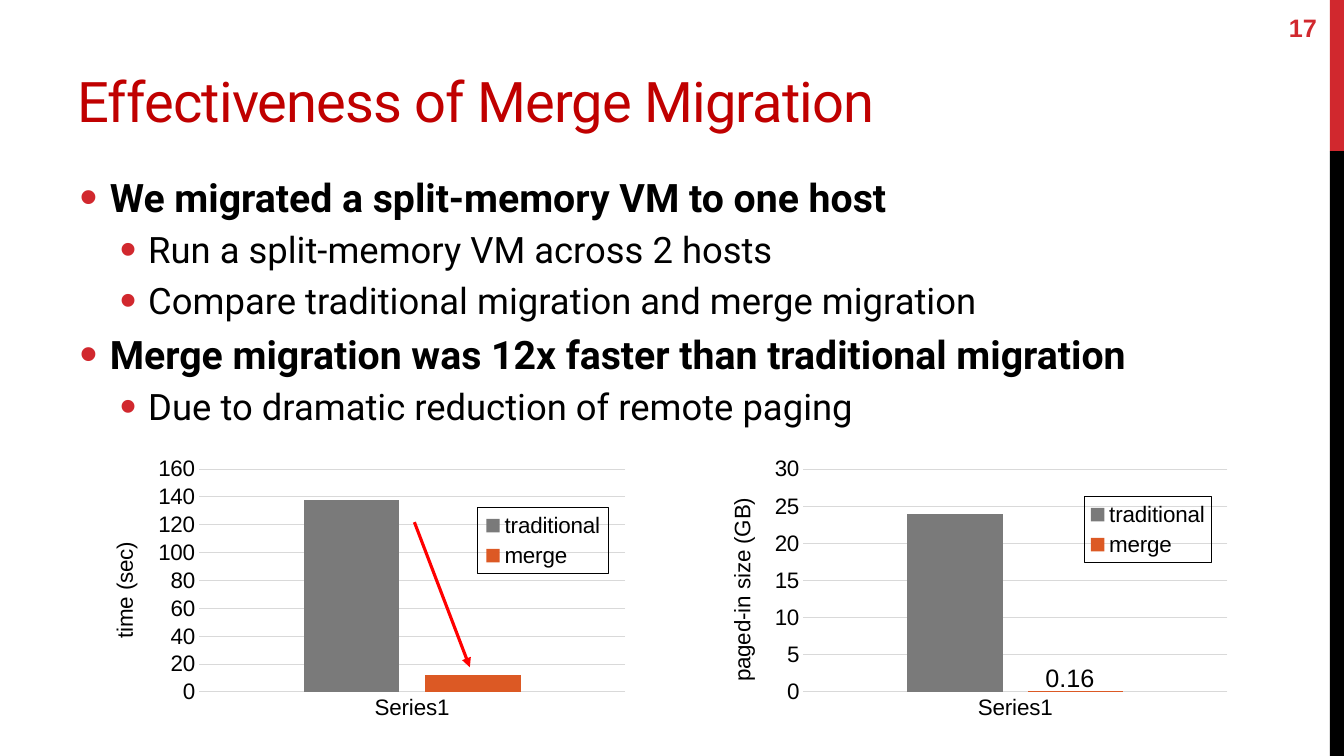
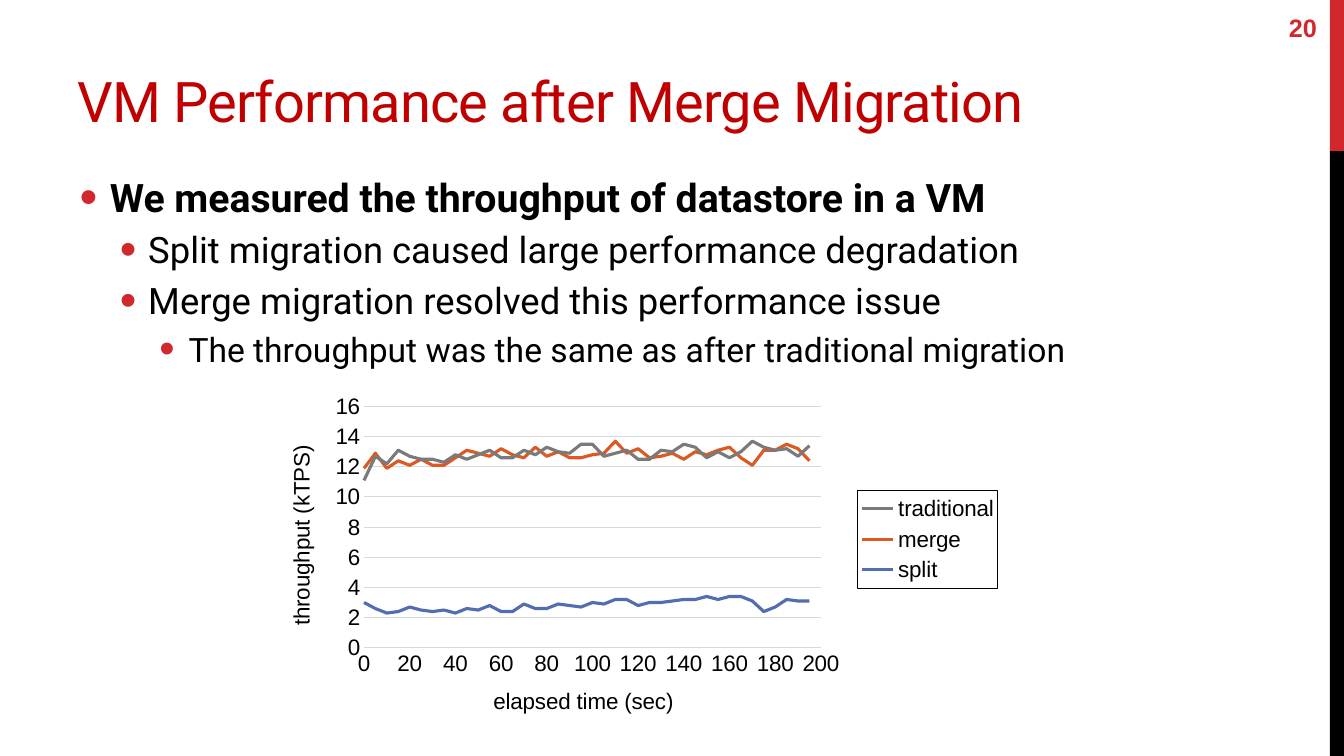
"""Two slides on merge migration: bullets above native charts."""
from lxml import etree
from pptx import Presentation
from pptx.chart.data import CategoryChartData, XyChartData
from pptx.dml.color import RGBColor
from pptx.enum.chart import XL_CHART_TYPE, XL_LEGEND_POSITION, XL_TICK_MARK
from pptx.enum.shapes import MSO_CONNECTOR, MSO_SHAPE
from pptx.enum.text import MSO_ANCHOR, PP_ALIGN
from pptx.oxml import parse_xml
from pptx.oxml.ns import qn
from pptx.util import Inches, Pt

W, H = 13.33, 7.5
RED = RGBColor(0xD1, 0x28, 0x2E)
DARK = RGBColor(0xC0, 0, 0)
PURE = RGBColor(0xFF, 0, 0)
BLACK = RGBColor(0, 0, 0)
GREY = RGBColor(0xD9, 0xD9, 0xD9)
HUES = {"traditional": RGBColor(0x7A, 0x7A, 0x7A),
        "merge": RGBColor(0xDC, 0x59, 0x24),
        "split": RGBColor(0x52, 0x6D, 0xB0)}
BAR = XL_CHART_TYPE.COLUMN_CLUSTERED
CURVE = XL_CHART_TYPE.XY_SCATTER_LINES_NO_MARKERS
RIGHT, NONE = XL_LEGEND_POSITION.RIGHT, XL_TICK_MARK.NONE
TOP, MID, LOW = MSO_ANCHOR.TOP, MSO_ANCHOR.MIDDLE, MSO_ANCHOR.BOTTOM
RECT, LINE = MSO_SHAPE.RECTANGLE, MSO_CONNECTOR.STRAIGHT
ENDS = PP_ALIGN.RIGHT
NS = ('xmlns:c="http://schemas.openxmlformats.org/drawingml/2006/chart" '
      'xmlns:a="http://schemas.openxmlformats.org/drawingml/2006/main"')

HEAD = (0.67, 0.17, 12.02, 1.21)
BODY = (0.67, 1.67, 12.02, 5.43)
PAGE = (12.16, 0.07, 1, 0.4)
LEVELS = [(28, True, 0.3, 0.3, 6), (26, False, 0.68, 0.28, 5),
          (24, False, 1.08, 0.29, 5)]

RATES = {
    "traditional": [
        11.1, 12.7, 12.2, 13.1, 12.7, 12.5, 12.5, 12.3, 12.8, 12.5,
        12.8, 13.1, 12.6, 12.6, 13.1, 12.8, 13.3, 13, 12.9, 13.5,
        13.5, 12.7, 12.9, 13.1, 12.5, 12.5, 13.1, 13, 13.5, 13.3,
        12.6, 13, 12.6, 13, 13.7, 13.3, 13.1, 13.2, 12.7, 13.4],
    "merge": [
        11.9, 12.9, 11.9, 12.4, 12.1, 12.5, 12.1, 12.1, 12.6, 13.1,
        12.9, 12.7, 13.2, 12.8, 12.6, 13.3, 12.7, 13, 12.6, 12.6,
        12.8, 12.9, 13.7, 12.9, 13.2, 12.6, 12.7, 12.9, 12.5, 13,
        12.8, 13.1, 13.3, 12.6, 12.1, 13.1, 13.1, 13.5, 13.2, 12.4],
    "split": [
        3, 2.6, 2.3, 2.4, 2.7, 2.5, 2.4, 2.5, 2.3, 2.6,
        2.5, 2.8, 2.4, 2.4, 2.9, 2.6, 2.6, 2.9, 2.8, 2.7,
        3, 2.9, 3.2, 3.2, 2.8, 3, 3, 3.1, 3.2, 3.2,
        3.4, 3.2, 3.4, 3.4, 3.1, 2.4, 2.7, 3.2, 3.1, 3.1]}

SLIDES = [
    {"page": "17", "title": "Effectiveness of Merge Migration",
     "points": [
         (0, "We migrated a split-memory VM to one host"),
         (1, "Run a split-memory VM across 2 hosts"),
         (1, "Compare traditional migration and merge migration"),
         (0, "Merge migration was 12x faster than traditional migration"),
         (1, "Due to dramatic reduction of remote paging")],
     "charts": [
         {"kind": BAR, "at": (0.89, 4.49, 5.42, 2.73),
          "data": {"traditional": [138], "merge": [12]},
          "plot": (0.2, 0.06, 0.78, 0.81), "key": (0.71, 0.2, 0.24, 0.24),
          "y": ("time (sec)", 160, 20, (0.03, 0.31))},
         {"kind": BAR, "at": (7.02, 4.49, 5.26, 2.73),
          "data": {"traditional": [24], "merge": [0.16]},
          "plot": (0.18, 0.06, 0.8, 0.81), "key": (0.71, 0.16, 0.24, 0.24),
          "y": ("paged-in size (GB)", 30, 5, (0.03, 0.15))}],
     "label": ("0.16", (10.27, 6.52, 0.69, 0.4)),
     "arrow": (4.11, 5.18, 4.66, 6.62)},
    {"page": "20", "title": "VM Performance after Merge Migration",
     "points": [
         (0, "We measured the throughput of datastore in a VM"),
         (1, "Split migration caused large performance degradation"),
         (1, "Merge migration resolved this performance issue"),
         (2, "The throughput was the same as after traditional migration")],
     "charts": [
         {"kind": CURVE, "at": (2.66, 3.86, 7.31, 3.47), "data": RATES,
          "plot": (0.13, 0.05, 0.62, 0.69), "key": (0.8, 0.29, 0.19, 0.28),
          "y": ("throughput (kTPS)", 16, 2, (0.02, 0.15)),
          "x": ("elapsed time (sec)", 200, 20, (0.3, 0.84))}]}]


def style(font, size, color=BLACK, name="Arial", bold=False):
    values = {"size": Pt(size), "name": name, "bold": bold}
    for key, value in values.items():
        setattr(font, key, value)
    font.color.rgb = color


def write(slide, at, lines, anchor=TOP, wrap=True):
    frame = slide.shapes.add_textbox(*map(Inches, at)).text_frame
    frame.word_wrap, frame.vertical_anchor = wrap, anchor
    paras = []
    for i, line in enumerate(lines):
        para = frame.add_paragraph() if i else frame.paragraphs[0]
        para.add_run().text = line
        paras.append(para)
    return frame, paras


def bullet(para, level):
    size, bold, left, hang, gap = LEVELS[level]
    style(para.runs[0].font, size, name="Roboto", bold=bold)
    para.level, para.space_before = level, Pt(gap)
    props = para._p.get_or_add_pPr()
    props.set("marL", str(Inches(left)))
    props.set("indent", str(-Inches(hang)))
    tint = etree.SubElement(props, qn("a:buClr"))
    etree.SubElement(tint, qn("a:srgbClr"), val=str(RED))
    etree.SubElement(props, qn("a:buSzPct"), val="130000")
    etree.SubElement(props, qn("a:buFont"), typeface="Arial")
    etree.SubElement(props, qn("a:buChar"), char="•")


def band(slide, top, tall, color):
    shape = slide.shapes.add_shape(
        RECT, *map(Inches, (W - 0.14, top, 0.14, tall)))
    shape.shadow.inherit = False
    shape.fill.solid()
    shape.fill.fore_color.rgb = color
    shape.line.fill.background()


def place(node, index, spot, inner=False):
    for old in node.findall(qn("c:layout")):
        node.remove(old)
    target = '<c:layoutTarget val="inner"/>' if inner else ""
    modes = "".join(f'<c:{k}Mode val="edge"/>' for k in "xy")
    sizes = "".join(f'<c:{k} val="{v}"/>' for k, v in zip("xywh", spot))
    node.insert(index, parse_xml(
        f"<c:layout {NS}><c:manualLayout>{target}{modes}{sizes}"
        "</c:manualLayout></c:layout>"))


def scale(axis, text, top, unit, spot):
    axis.minimum_scale, axis.maximum_scale, axis.major_unit = 0, top, unit
    title = axis.axis_title
    title.text_frame.text = text
    style(title.text_frame.paragraphs[0].runs[0].font, 16)
    place(title._element, 1, spot)


def graph(slide, item):
    bars = item["kind"] == BAR
    data = CategoryChartData() if bars else XyChartData()
    if bars:
        data.categories = ["Series1"]
    for name, values in item["data"].items():
        if bars:
            data.add_series(name, values)
        else:
            series = data.add_series(name)
            for i, value in enumerate(values):
                series.add_data_point(5 * i, value)
    chart = slide.shapes.add_chart(
        item["kind"], *map(Inches, item["at"]), data).chart
    chart.has_title = False
    style(chart.font, 16)
    place(chart._chartSpace.chart.plotArea, 0, item["plot"], True)

    across, up = chart.category_axis, chart.value_axis
    for axis in (across, up):
        axis.major_tick_mark = axis.minor_tick_mark = NONE
    across.has_major_gridlines, up.has_major_gridlines = False, True
    for line in (across.format.line, up.major_gridlines.format.line):
        line.color.rgb, line.width = GREY, Pt(0.75)
    up.format.line.fill.background()
    scale(up, *item["y"])
    if "x" in item:
        scale(across, *item["x"])

    plot = chart.plots[0]
    plot.vary_by_categories = False
    if bars:
        plot.gap_width, plot.overlap = 219, -27
    for series in plot.series:
        hue = HUES[series.name]
        if bars:
            series.format.fill.solid()
            series.format.fill.fore_color.rgb = hue
        else:
            series.smooth = False
            series.format.line.color.rgb = hue
            series.format.line.width = Pt(2.25)

    chart.has_legend = True
    key = chart.legend
    key.position, key.include_in_layout = RIGHT, bars
    style(key.font, 16)
    node = key._element
    place(node, 1, item["key"])
    node.find(qn("c:overlay")).addnext(parse_xml(
        f'<c:spPr {NS}><a:ln w="9525"><a:solidFill>'
        f'<a:srgbClr val="{BLACK}"/></a:solidFill></a:ln></c:spPr>'))


def arrow(slide, ends):
    link = slide.shapes.add_connector(LINE, *map(Inches, ends))
    link.line.color.rgb, link.line.width = PURE, Pt(2.25)
    etree.SubElement(link.line._get_or_add_ln(), qn("a:tailEnd"),
                     type="triangle")
    etree.SubElement(link._element.spPr, qn("a:effectLst"))


def build(deck, item):
    slide = deck.slides.add_slide(deck.slide_layouts[6])
    band(slide, 0, H * 0.2, RED)
    band(slide, H * 0.2, H * 0.8, BLACK)
    _, (para,) = write(slide, HEAD, [item["title"]], LOW)
    font = para.runs[0].font
    style(font, 40, DARK, "Roboto")
    font._element.set("spc", "-60")
    frame, paras = write(slide, BODY, [text for _, text in item["points"]])
    frame.margin_left = frame.margin_right = Inches(0.12)
    for para, (level, _) in zip(paras, item["points"]):
        bullet(para, level)
    _, (para,) = write(slide, PAGE, [item["page"]], MID)
    para.alignment = ENDS
    style(para.runs[0].font, 18, RED, bold=True)
    for part in item["charts"]:
        graph(slide, part)
    if "label" in item:
        text, at = item["label"]
        _, (para,) = write(slide, at, [text], wrap=False)
        style(para.runs[0].font, 18)
    if "arrow" in item:
        arrow(slide, item["arrow"])


def main():
    deck = Presentation()
    deck.slide_width, deck.slide_height = Inches(W), Inches(H)
    for item in SLIDES:
        build(deck, item)
    deck.save("out.pptx")


if __name__ == "__main__":
    main()
